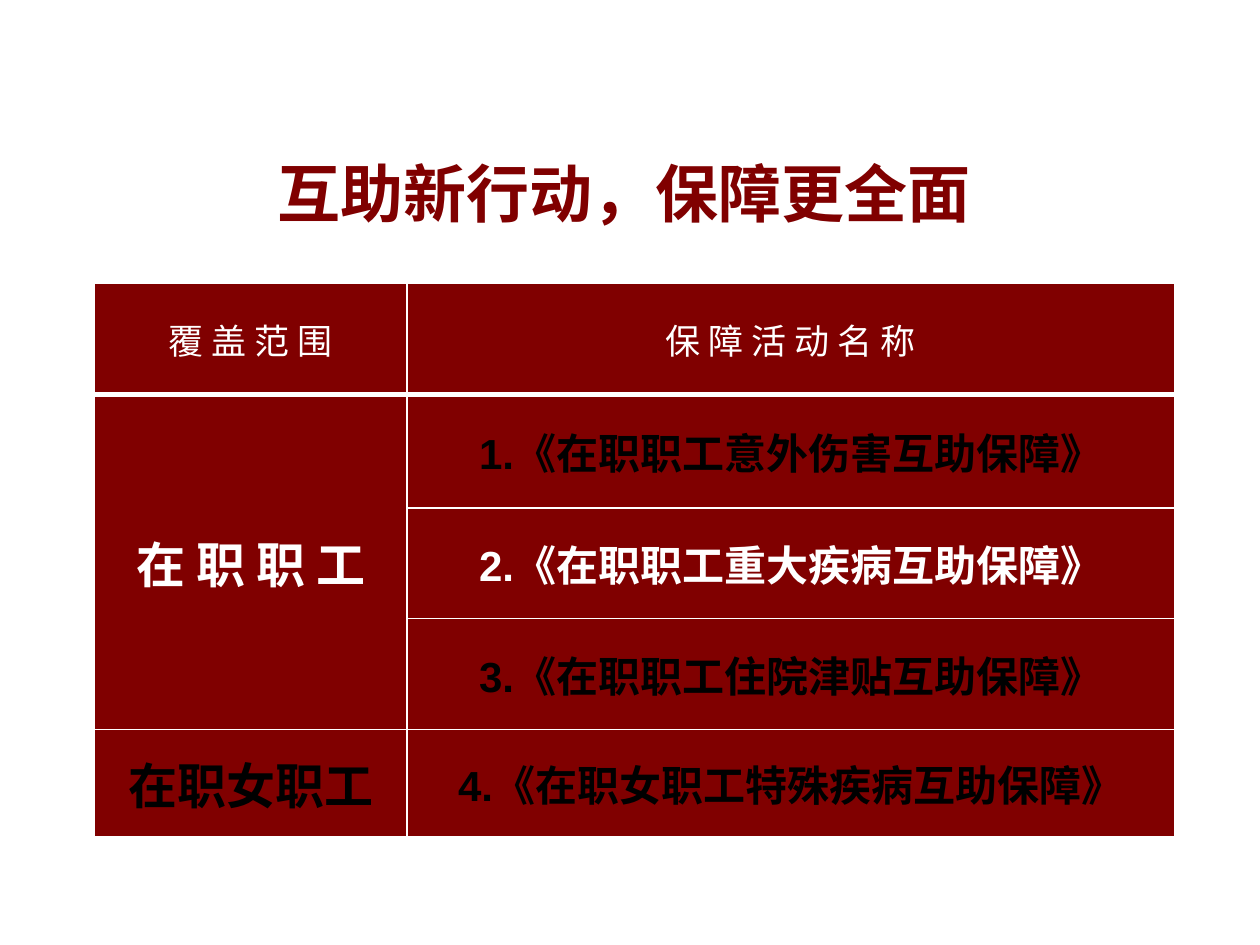
from lxml import etree
from pptx import Presentation
from pptx.dml.color import RGBColor
from pptx.enum.text import MSO_ANCHOR, PP_ALIGN
from pptx.oxml.ns import qn
from pptx.util import Inches, Pt

MID = MSO_ANCHOR.MIDDLE
CENTER = PP_ALIGN.CENTER
HEX = {"red": "800000", "white": "FFFFFF", "black": "000000"}
HAN = "Noto Sans CJK SC"
WIDE, HIGH = 10, 7.5
COLS = [2.48, 6.09]
ROWS = [0.88, 0.9, 0.88, 0.88, 0.85]
HEAD = ["覆 盖 范 围", "保 障 活 动 名 称"]
GROUPS = [
    ("在 职 职 工", "white", [
        ("1.《在职职工意外伤害互助保障》", "black"),
        ("2.《在职职工重大疾病互助保障》", "white"),
        ("3.《在职职工住院津贴互助保障》", "black"),
    ]),
    ("在职女职工", "black", [("4.《在职女职工特殊疾病互助保障》", "black")]),
]


def write(frame, text, size, color, face="Arial", bold=True, space=None):
    frame.word_wrap = True
    para = frame.paragraphs[0]
    para.alignment = CENTER
    para.line_spacing = space
    run = para.add_run()
    run.text = text
    font = run.font
    font.size, font.bold, font.name = Pt(size), bold, face
    font.color.rgb = RGBColor.from_string(HEX[color])
    etree.SubElement(run._r.get_or_add_rPr(), qn("a:ea"), typeface=HAN)


def edge(cell, base):
    props = cell._tc.get_or_add_tcPr()
    widths = {"lnL": 1, "lnR": 1, "lnT": 1, "lnB": base}
    for spot, (side, width) in enumerate(widths.items()):
        line = etree.Element(qn(f"a:{side}"), w=str(Pt(width)))
        fill = etree.SubElement(line, qn("a:solidFill"))
        etree.SubElement(fill, qn("a:srgbClr"), val=HEX["white"])
        props.insert(spot, line)


def title(slide, box):
    shape = slide.shapes.add_textbox(*map(Inches, box))
    shape.text_frame.vertical_anchor = MID
    write(shape.text_frame, "互助新行动，保障更全面", 36, "red", face=HAN, space=1.2)


def plans(slide, box):
    grid = slide.shapes.add_table(len(ROWS), len(COLS), *map(Inches, box)).table
    for col, size in zip(grid.columns, COLS):
        col.width = Inches(size)
    for row, size in zip(grid.rows, ROWS):
        row.height = Inches(size)
    for num in range(len(ROWS)):
        for cell in grid.rows[num].cells:
            cell.fill.solid()
            cell.fill.fore_color.rgb = RGBColor.from_string(HEX["red"])
            cell.vertical_anchor = MID
            edge(cell, 1 if num else 3)
    for num, text in enumerate(HEAD):
        write(grid.cell(0, num).text_frame, text, 20, "white", bold=False)
    top = 1
    for name, color, items in GROUPS:
        first = grid.cell(top, 0)
        if len(items) > 1:
            first.merge(grid.cell(top + len(items) - 1, 0))
        write(first.text_frame, name, 28, color)
        for num, (text, tone) in enumerate(items, top):
            write(grid.cell(num, 1).text_frame, text, 24, tone)
        top += len(items)


def main():
    deck = Presentation()
    deck.slide_width, deck.slide_height = Inches(WIDE), Inches(HIGH)
    slide = deck.slides.add_slide(deck.slide_layouts[6])
    title(slide, (0.067 * WIDE, 0.143 * HIGH, 0.856 * WIDE, 0.104 * HIGH))
    plans(slide, (0.075 * WIDE, 0.3 * HIGH, sum(COLS), sum(ROWS)))
    deck.save("out.pptx")


if __name__ == "__main__":
    main()
